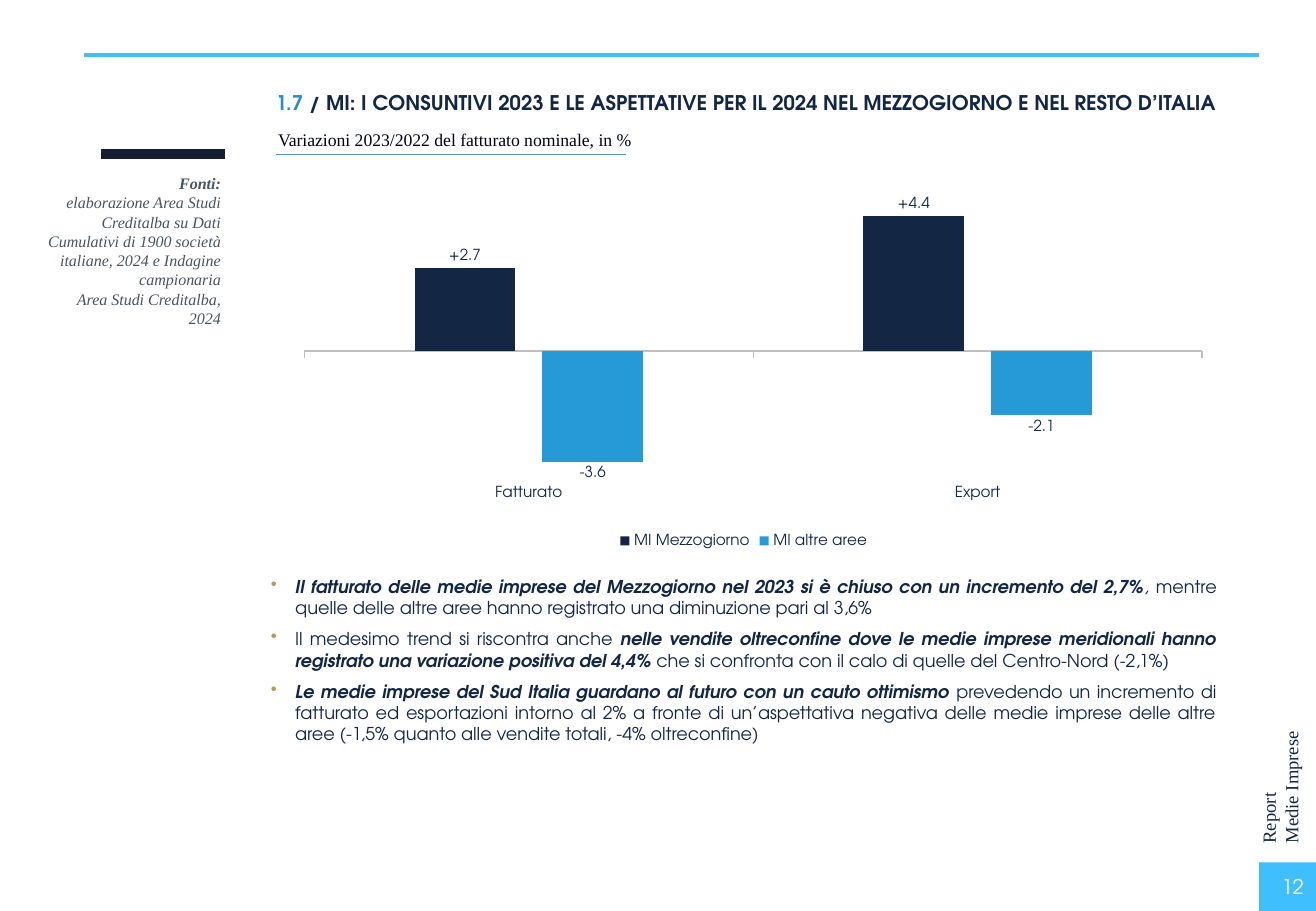
"""Build the slide on 2023 results of medium-sized firms in Southern Italy."""
from dataclasses import dataclass

from lxml.etree import SubElement
from pptx import Presentation
from pptx.chart.data import CategoryChartData
from pptx.dml.color import RGBColor
from pptx.enum.chart import XL_CHART_TYPE as ChartType
from pptx.enum.chart import XL_LABEL_POSITION as LabelPosition
from pptx.enum.chart import XL_LEGEND_POSITION as LegendPosition
from pptx.enum.chart import XL_TICK_LABEL_POSITION as TickLabels
from pptx.enum.chart import XL_TICK_MARK as TickMark
from pptx.enum.shapes import MSO_CONNECTOR as Connector
from pptx.enum.shapes import MSO_SHAPE as Shape
from pptx.enum.text import MSO_ANCHOR as Anchor
from pptx.enum.text import MSO_AUTO_SIZE as AutoSize
from pptx.enum.text import PP_ALIGN as Align
from pptx.oxml.ns import qn
from pptx.util import Pt


@dataclass(frozen=True)
class Theme:
    """Colours, fonts and type sizes."""
    navy: str = "132745"
    bar: str = "151E31"
    sky: str = "40BFFF"
    blue: str = "269AD6"
    number: str = "2B8FC2"
    rule: str = "5397C7"
    grey: str = "485463"
    ink: str = "000019"
    axis: str = "BFBFBF"
    gold: str = "BE9655"
    white: str = "FFFFFF"
    sans: str = "TeX Gyre Adventor"
    serif: str = "Times New Roman"
    heading: float = 12
    side: float = 11
    body: float = 10.5
    source: float = 9.5
    chart: float = 9


class SlideBuilder:
    """Hold the theme and the current slide, and add elements in points."""

    def __init__(self, deck, theme):
        """Add a title-only slide to the deck."""
        self.theme = theme
        self.page = deck.slides.add_slide(deck.slide_layouts[5])

    def style(self, font, face, size, color, bold=False, italic=False):
        """Format one font."""
        font.name, font.size = face, Pt(size)
        font.bold, font.italic = bold, italic
        font.color.rgb = RGBColor.from_string(color)

    def place(self, item, left, top, width, height):
        """Move and size an element."""
        item.left, item.top = Pt(left), Pt(top)
        item.width, item.height = Pt(width), Pt(height)

    def bullet(self, para):
        """Give a paragraph a gold hanging bullet."""
        props = para._p.get_or_add_pPr()
        props.set("marL", str(Pt(14.4)))
        props.set("indent", str(Pt(-14.4)))
        color = SubElement(props, qn("a:buClr"))
        SubElement(color, qn("a:srgbClr"), val=self.theme.gold)
        SubElement(props, qn("a:buChar"), char="•")
        para.space_after = Pt(6)

    def fill_text(self, box, paragraphs, face, size, color, align, anchor, bullets=False):
        """Put runs of (text, emphasis, colour) into a shape."""
        frame = box.text_frame
        frame.word_wrap = True
        frame.auto_size = AutoSize.NONE
        frame.vertical_anchor = anchor
        for index, runs in enumerate(paragraphs):
            para = frame.add_paragraph() if index else frame.paragraphs[0]
            if bullets:
                self.bullet(para)
            para.alignment = align
            for text, emphasis, tint in runs:
                span = para.add_run()
                span.text = text
                self.style(span.font, face, size, tint or color,
                           "b" in emphasis, "i" in emphasis)

    def title(self, bounds, runs):
        """Move and fill the title placeholder."""
        box = self.page.shapes.title
        self.place(box, *bounds)
        self.fill_text(box, [runs], self.theme.sans, self.theme.heading,
                       self.theme.navy, Align.LEFT, Anchor.TOP)

    def text(self, bounds, paragraphs, face, size, color,
             align=Align.LEFT, anchor=Anchor.TOP, rotation=0, bullets=False):
        """Add a text box."""
        box = self.page.shapes.add_textbox(*map(Pt, bounds))
        box.rotation = rotation
        self.fill_text(box, paragraphs, face, size, color, align, anchor, bullets)

    def block(self, bounds, color):
        """Add a plain filled rectangle."""
        block = self.page.shapes.add_shape(Shape.RECTANGLE, *map(Pt, bounds))
        block.shadow.inherit = False
        block.fill.solid()
        block.fill.fore_color.rgb = RGBColor.from_string(color)
        block.line.fill.background()

    def rule(self, start, end, top, color, width):
        """Add a horizontal line."""
        line = self.page.shapes.add_connector(
            Connector.STRAIGHT, Pt(start), Pt(top), Pt(end), Pt(top))
        line.line.color.rgb = RGBColor.from_string(color)
        line.line.width = Pt(width)
        SubElement(line._element.spPr, qn("a:effectLst"))

    def columns(self, bounds, categories, series, scale, plot_layout):
        """Add a clustered column chart from (name, values, colour, format)."""
        theme = self.theme
        data = CategoryChartData(number_format="#,##0.0")
        data.categories = categories
        for name, values, _, _ in series:
            data.add_series(name, values)
        chart = self.page.shapes.add_chart(
            ChartType.COLUMN_CLUSTERED, *map(Pt, bounds), data).chart
        chart.has_title = False
        chart.has_legend = True
        chart.legend.position = LegendPosition.BOTTOM
        chart.legend.include_in_layout = False
        category, value = chart.category_axis, chart.value_axis
        category.tick_label_position = TickLabels.LOW
        category.major_tick_mark = TickMark.OUTSIDE
        category.format.line.color.rgb = RGBColor.from_string(theme.axis)
        category.format.line.width = Pt(0.75)
        value.minimum_scale, value.maximum_scale = scale
        value.has_major_gridlines = False
        value.visible = False
        for font in (chart.font, chart.legend.font, category.tick_labels.font):
            self.style(font, theme.sans, theme.chart, theme.navy)
        plot = chart.plots[0]
        plot.gap_width, plot.overlap = 219, -27
        plot.vary_by_categories = False
        for bars, (_, _, color, number_format) in zip(plot.series, series):
            bars.invert_if_negative = False
            bars.format.fill.solid()
            bars.format.fill.fore_color.rgb = RGBColor.from_string(color)
            labels = bars.data_labels
            labels.show_value = True
            labels.position = LabelPosition.OUTSIDE_END
            labels.number_format = number_format
            labels.number_format_is_linked = False
            self.style(labels.font, theme.sans, theme.chart, theme.navy)
        area = chart._chartSpace.chart.plotArea
        for old in area.findall(qn("c:layout")):
            area.remove(old)
        layout = SubElement(area, qn("c:layout"))
        area.insert(0, layout)
        manual = SubElement(layout, qn("c:manualLayout"))
        settings = {"layoutTarget": "inner", "xMode": "edge", "yMode": "edge"}
        settings.update(zip("xywh", map(str, plot_layout)))
        for tag, setting in settings.items():
            SubElement(manual, qn(f"c:{tag}"), val=setting)


def main():
    """Build and save the deck."""
    theme = Theme()
    deck = Presentation()
    deck.slide_width, deck.slide_height = Pt(779.76), Pt(540)
    slide = SlideBuilder(deck, theme)
    slide.block((746, 511.2, 33.76, 28.8), theme.sky)
    slide.text((690.5, 422, 136, 34), [[("Report", "", None)], [("Medie Imprese", "", None)]],
               theme.serif, theme.side, theme.navy, rotation=270)
    slide.rule(49.7, 746, 32.4, theme.sky, 2.5)
    slide.text((20, 99.4, 118, 124), [
        [("Fonti:", "bi", None)],
        [("elaborazione Area Studi Creditalba su Dati Cumulativi di 1900 società "
          "italiane, 2024 e Indagine campionaria", "i", None)],
        [("Area Studi Creditalba, 2024", "i", None)],
    ], theme.serif, theme.source, theme.grey, Align.RIGHT)
    slide.text((157.7, 72.7, 580.3, 34.6),
               [[("Variazioni 2023/2022 del fatturato nominale, in %", "", None)]],
               theme.serif, theme.body, theme.ink)
    slide.rule(163.4, 370.8, 91.4, theme.rule, 0.75)
    slide.title((156.2, 49.7, 621.4, 21.6), [
        ("1.7", "b", theme.number),
        (" / MI: I CONSUNTIVI 2023 E LE ASPETTATIVE PER IL 2024 NEL MEZZOGIORNO "
         "E NEL RESTO D’ITALIA", "b", None)])
    slide.text((604.8, 511.2, 174.96, 28.8), [[("12", "", None)]], theme.sans,
               theme.heading, theme.white, Align.RIGHT, Anchor.MIDDLE)
    slide.rule(59.8, 133.2, 91.4, theme.bar, 6)
    slide.columns((157.7, 105.8, 565.9, 221.8), ["Fatturato", "Export"], [
        ("MI Mezzogiorno", (2.7, 4.4), theme.navy, "+#,##0.0;-#,##0.0"),
        ("MI altre aree", (-3.6, -2.1), theme.blue, "#,##0.0"),
    ], (-4, 5), (0.04, 0.05, 0.94, 0.74))
    slide.text((153.4, 337.7, 574.6, 146.2), [
        [("Il fatturato delle medie imprese del Mezzogiorno nel 2023 si è chiuso con un "
          "incremento del 2,7%", "bi", None), (", ", "i", None),
         ("mentre quelle delle altre aree hanno registrato una diminuzione pari al 3,6%", "", None)],
        [("Il medesimo trend si riscontra anche ", "", None),
         ("nelle vendite oltreconfine dove le medie imprese meridionali hanno registrato "
          "una variazione positiva del 4,4% ", "bi", None),
         ("che si confronta con il calo di quelle del Centro-Nord (-2,1%)", "", None)],
        [("Le medie imprese del Sud Italia guardano al futuro con un cauto ottimismo", "bi", None),
         (" prevedendo un incremento di fatturato ed esportazioni intorno al 2% a fronte di "
          "un’aspettativa negativa delle medie imprese delle altre aree (-1,5% quanto alle "
          "vendite totali, -4% oltreconfine)", "", None)],
    ], theme.sans, theme.body, theme.navy, Align.JUSTIFY, bullets=True)
    deck.save("out.pptx")


if __name__ == "__main__":
    main()
